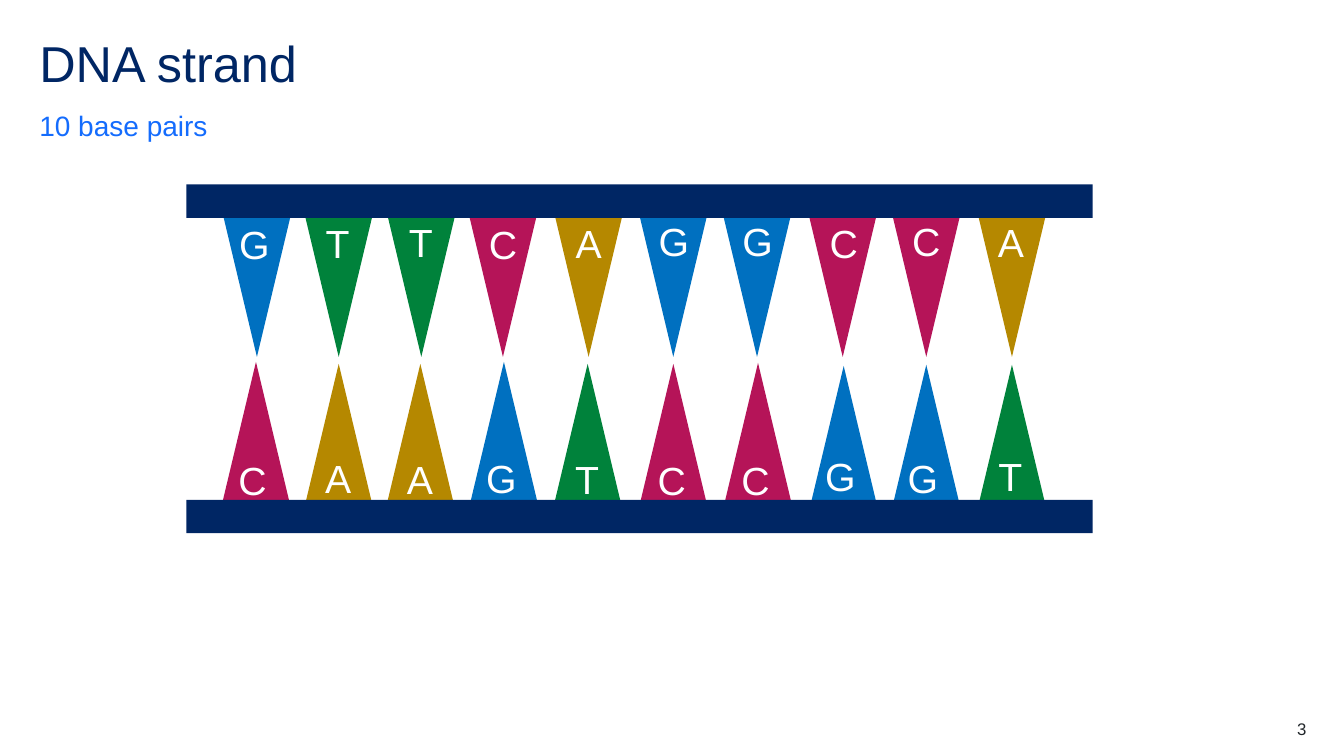
from pptx import Presentation
from pptx.enum import shapes, text
from pptx.dml.color import RGBColor
from pptx.util import Pt

COLORS = {
    "navy": "002664", "blue": "146CFD", "white": "FFFFFF", "ink": "22272B",
    "G": "0070C0", "T": "00823B", "C": "B51458", "A": "B58800",
}
LEFT, CENTER, RIGHT = text.PP_ALIGN.LEFT, text.PP_ALIGN.CENTER, text.PP_ALIGN.RIGHT
MERGE, RECTANGLE = shapes.MSO_SHAPE.FLOWCHART_MERGE, shapes.MSO_SHAPE.RECTANGLE

deck = Presentation()
deck.slide_width, deck.slide_height = Pt(960), Pt(540)
slide = deck.slides.add_slide(deck.slide_layouts[6])


def add_text(words, box, size, color, align=LEFT, anchor=text.MSO_ANCHOR.TOP,
             line_spacing=None, space_after=0):
    frame = slide.shapes.add_textbox(*map(Pt, box)).text_frame
    frame.word_wrap = True
    frame.vertical_anchor = anchor
    frame.margin_left = frame.margin_right = frame.margin_top = frame.margin_bottom = 0
    paragraph = frame.paragraphs[0]
    paragraph.alignment = align
    paragraph.line_spacing = line_spacing
    paragraph.space_after = Pt(space_after)
    run = paragraph.add_run()
    run.text = words
    run.font.name, run.font.size = "Arial", Pt(size)
    run.font.color.rgb = RGBColor.from_string(COLORS[color])


def add_solid(kind, box, color, rotation=0):
    """Add a filled preset shape without outline or shadow."""
    solid = slide.shapes.add_shape(kind, *map(Pt, box))
    solid.fill.solid()
    solid.fill.fore_color.rgb = RGBColor.from_string(COLORS[color])
    solid.line.fill.background()
    solid.shadow.inherit = False
    solid.rotation = rotation


add_text("DNA strand", (28.1, 28.1, 904.3, 43.2), 36, "navy", line_spacing=0.9)
add_text("10 base pairs", (28.1, 77, 904.3, 24.5), 20, "blue",
         anchor=text.MSO_ANCHOR.BOTTOM, line_spacing=1.5, space_after=12)

# Each base: letter, wedge left, wedge top, letter left, letter top, letter alignment
upper_bases = [
    ("G", 159.8, 155.5, 167, 157.7, CENTER),
    ("T", 218.2, 155.5, 232.6, 157, LEFT),
    ("T", 277.2, 155.5, 285.8, 156.2, CENTER),
    ("C", 335.5, 155.5, 349.2, 157.7, LEFT),
    ("A", 396.7, 155.5, 411.1, 157, LEFT),
    ("G", 457.2, 155.5, 466.6, 155.5, CENTER),
    ("G", 517, 155.5, 526.3, 155.5, CENTER),
    ("C", 578.2, 155.5, 592.6, 157, LEFT),
    ("C", 637.9, 155.5, 651.6, 155.5, LEFT),
    ("A", 699.1, 155.5, 712.8, 156.2, LEFT),
]
lower_bases = [
    ("C", 159.1, 258.5, 165.6, 326.2, CENTER),
    ("A", 218.2, 259.9, 226.8, 324.7, CENTER),
    ("A", 276.5, 259.9, 285.1, 325.4, CENTER),
    ("G", 336.2, 258.5, 343.4, 324.7, CENTER),
    ("T", 396, 259.9, 404.6, 325.4, CENTER),
    ("C", 457.2, 259.9, 465.1, 326.2, CENTER),
    ("C", 517.7, 259.2, 524.9, 326.2, CENTER),
    ("G", 578.9, 261.4, 585.4, 323.3, CENTER),
    ("G", 637.9, 260.6, 644.4, 324.7, CENTER),
    ("T", 699.1, 260.6, 707, 323.3, CENTER),
]

for bases, backbone_top, rotation in ((upper_bases, 131.8, 0), (lower_bases, 357.1, 180)):
    for base, wedge_left, wedge_top, *_ in bases:
        add_solid(MERGE, (wedge_left, wedge_top, 47.5, 99.4), base, rotation)
    add_solid(RECTANGLE, (133.2, backbone_top, 647.3, 23.8), "navy")
    for base, _, _, letter_left, letter_top, align in bases:
        add_text(base, (letter_left, letter_top, 29.5, 23.8), 28, "white", align)

add_text("3", (876.2, 513.4, 56.9, 14.4), 12, "ink", RIGHT)

deck.save("out.pptx")
